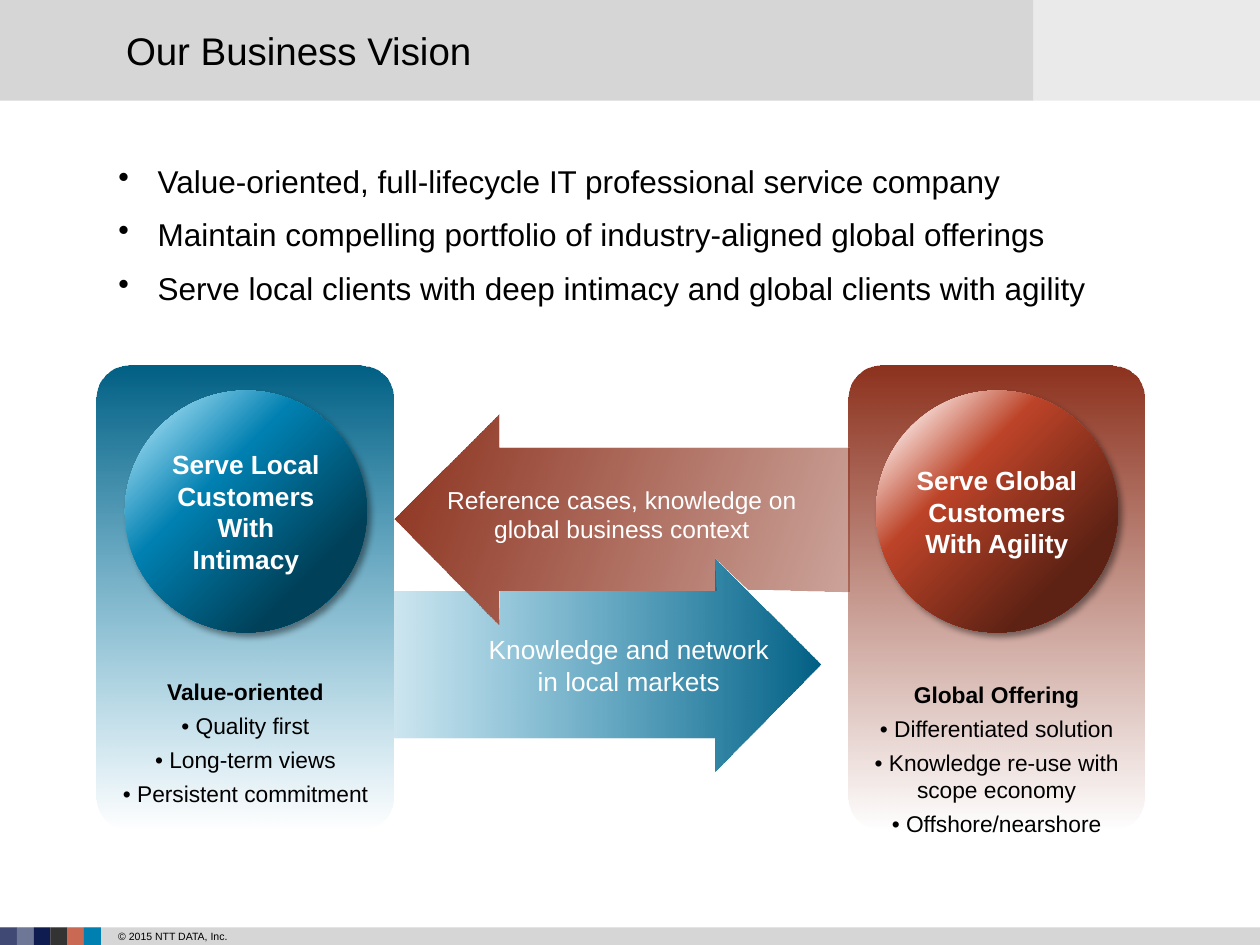
import pptx
import pptx.dml.color
import pptx.enum.shapes
import pptx.enum.text
import pptx.oxml
import pptx.oxml.ns
import pptx.util
from lxml import etree

Pt = pptx.util.Pt
RGB = pptx.dml.color.RGBColor.from_string
SHAPE = pptx.enum.shapes.MSO_SHAPE
ALIGN = pptx.enum.text.PP_ALIGN
ANCHOR = pptx.enum.text.MSO_ANCHOR
NS = pptx.oxml.ns.nsdecls("a")

THEME = {
    "font": "Arial", "text": "000000", "inverse": "FFFFFF", "band": "D6D6D6", "band_light": "EAEAEA",
    "title": 22, "body": 18, "circle": 15, "card": 13, "reference": 14, "network": 15, "footer": 6,
    "squares": ["3F4973", "6F7796", "0F1C50", "333333", "C96953", "0080B1"],
    # Gradient stops: position, colour, opacity in percent
    "local_card": [(0, "006085", 100), (100, "0080B1", 0)],
    "local_circle": [(3, "BCEDFF", 100), (37, "0080B1", 100), (77, "004058", 100)],
    "global_card": [(0, "8D321E", 100), (100, "8D321E", 0)],
    "global_circle": [(13, "F5D7D0", 100), (35, "BC4328", 100), (77, "5E2214", 100)],
    "reference_arrow": [(0, "8D321E", 100), (100, "8D321E", 43)],
    "network_arrow": [(0, "0080B1", 20), (100, "006085", 100)],
}


def paint(shape, fill, angle=0):
    """Fill with one colour, or with a linear gradient when given stops; no line or shadow."""
    shape.shadow.inherit = False
    shape.line.fill.background()
    if isinstance(fill, str):
        shape.fill.solid()
        shape.fill.fore_color.rgb = RGB(fill)
        return
    stops = "".join(
        f'<a:gs pos="{position * 1000}"><a:srgbClr val="{colour}">'
        f'<a:alpha val="{opacity * 1000}"/></a:srgbClr></a:gs>'
        for position, colour, opacity in fill)
    shape.fill.background()
    old = shape.element.spPr.find(pptx.oxml.ns.qn("a:noFill"))
    old.getparent().replace(old, pptx.oxml.parse_xml(
        f'<a:gradFill {NS} rotWithShape="1"><a:gsLst>{stops}</a:gsLst>'
        f'<a:lin ang="{angle * 60000}" scaled="0"/></a:gradFill>'))


def write(shape, lines, size, colour="text", align=ALIGN.CENTER, gap=0, bold=0,
          insets=(7.2, 3.6, 7.2, 3.6), anchor=ANCHOR.TOP, wrap=True, bullet_indent=0):
    """Write one paragraph per line; the first `bold` lines are bold."""
    frame = shape.text_frame
    frame.word_wrap = wrap
    frame.vertical_anchor = anchor
    (frame.margin_left, frame.margin_top,
     frame.margin_right, frame.margin_bottom) = [Pt(inset) for inset in insets]
    for index, line in enumerate(lines):
        para = frame.paragraphs[0] if index == 0 else frame.add_paragraph()
        para.text = line
        para.alignment = align
        para.space_before = Pt(gap if index else 0)
        if bullet_indent:
            properties = para._p.get_or_add_pPr()
            properties.set("marL", str(Pt(bullet_indent)))
            properties.set("indent", str(-Pt(bullet_indent)))
            etree.SubElement(properties, pptx.oxml.ns.qn("a:buChar"), char="•")
        para.font.name = THEME["font"]
        para.font.size = Pt(THEME[size])
        para.font.bold = index < bold
        para.font.color.rgb = RGB(THEME[colour])


deck = pptx.Presentation()
deck.slide_width, deck.slide_height = Pt(720), Pt(540)
page = deck.slides.add_slide(deck.slide_layouts[5])
shapes = page.shapes

# Header and footer bands
bands = [(590.4, 0, 129.6, 57.6, THEME["band_light"]),
         (0, 0, 590.4, 57.6, THEME["band"]),
         (0, 530, 720, 10, THEME["band"])]
bands += [(9.6 * index, 530, 9.6, 10, colour) for index, colour in enumerate(THEME["squares"])]
for left, top, width, height, colour in bands:
    band = shapes.add_shape(SHAPE.RECTANGLE, Pt(left), Pt(top), Pt(width), Pt(height))
    paint(band, colour)

footer = shapes.add_textbox(Pt(60.5), Pt(531.4), Pt(186), Pt(7.2))
write(footer, ["© 2015 NTT DATA, Inc."], "footer", align=ALIGN.LEFT, insets=(7.2, 0, 7.2, 0))

# The title goes in front of the header band
title = shapes.title
title.element.getparent().append(title.element)
title.left, title.top, title.width, title.height = Pt(57.6), Pt(0), Pt(517), Pt(57.6)
write(title, ["Our Business Vision"], "title", align=ALIGN.LEFT,
      insets=(14.4, 3.6, 14.4, 3.6), anchor=ANCHOR.MIDDLE)

body = shapes.add_textbox(Pt(60.5), Pt(89), Pt(599), Pt(88.6))
write(body, [
    "Value-oriented, full-lifecycle IT professional service company",
    "Maintain compelling portfolio of industry-aligned global offerings",
    "Serve local clients with deep intimacy and global clients with agility",
], "body", align=ALIGN.LEFT, gap=9, bullet_indent=22.5)

# Cards, each with a circle on top
cards = [
    (55.4, "local", 245, ["Serve Local Customers", "With\vIntimacy"],
     ["Value-oriented", "• Quality first", "• Long-term views", "• Persistent commitment"]),
    (484.6, "global", 281, ["Serve Global Customers", "With Agility"],
     ["Global Offering", "• Differentiated solution",
      "• Knowledge re-use with\vscope economy", "• Offshore/nearshore"]),
]
for left, name, top_inset, heading, points in cards:
    card = shapes.add_shape(SHAPE.ROUNDED_RECTANGLE, Pt(left), Pt(208.8), Pt(169.6), Pt(265))
    card.adjustments[0] = 0.11
    paint(card, THEME[name + "_card"], 90)
    write(card, points, "card", gap=3.7, bold=1, insets=(7.2, top_inset, 7.2, 7.2),
          anchor=ANCHOR.BOTTOM, wrap=False)

    circle = shapes.add_shape(SHAPE.OVAL, Pt(left + 16), Pt(223.2), Pt(138.2), Pt(138.2))
    paint(circle, THEME[name + "_circle"], 45)
    effects = circle.element.spPr.find(pptx.oxml.ns.qn("a:effectLst"))
    effects.append(pptx.oxml.parse_xml(
        f'<a:outerShdw {NS} blurRad="{Pt(4)}" dist="{Pt(3)}" dir="2700000" algn="tl" rotWithShape="0">'
        '<a:srgbClr val="000000"><a:alpha val="43000"/></a:srgbClr></a:outerShdw>'))
    write(circle, heading, "circle", "inverse", bold=2, insets=(0, 0, 0, 0), anchor=ANCHOR.MIDDLE)

# Interlocking arrows: outline, fill, gradient angle, label box, label, label size
arrows = [
    ([(225.4, 296.6), (285.1, 236.9), (285.1, 255.6), (485.3, 255.6), (485.3, 338.4), (427, 337),
      (408.2, 319), (409, 337.7), (285.1, 337.7), (285.1, 357.1)],
     "reference_arrow", 20, (247, 273.6, 216.7, 41),
     ["Reference cases, knowledge on global business context"], "reference"),
    ([(468.7, 379.4), (408.2, 319), (408.2, 337.7), (285.8, 337.7), (285.1, 357.1), (266.4, 337.7),
      (225.4, 337.7), (225.4, 421.2), (408.2, 421.2), (408.2, 440.6)],
     "network_arrow", 0, (256.3, 358.6, 206, 44),
     ["Knowledge and network", "in local markets"], "network"),
]
for outline, fill, angle, label_box, label, size in arrows:
    corners = [(Pt(x), Pt(y)) for x, y in outline]
    builder = shapes.build_freeform(*corners[0])
    builder.add_line_segments(corners[1:], close=True)
    paint(builder.convert_to_shape(), THEME[fill], angle)
    write(shapes.add_textbox(*[Pt(length) for length in label_box]), label, size, "inverse")

deck.save("out.pptx")
